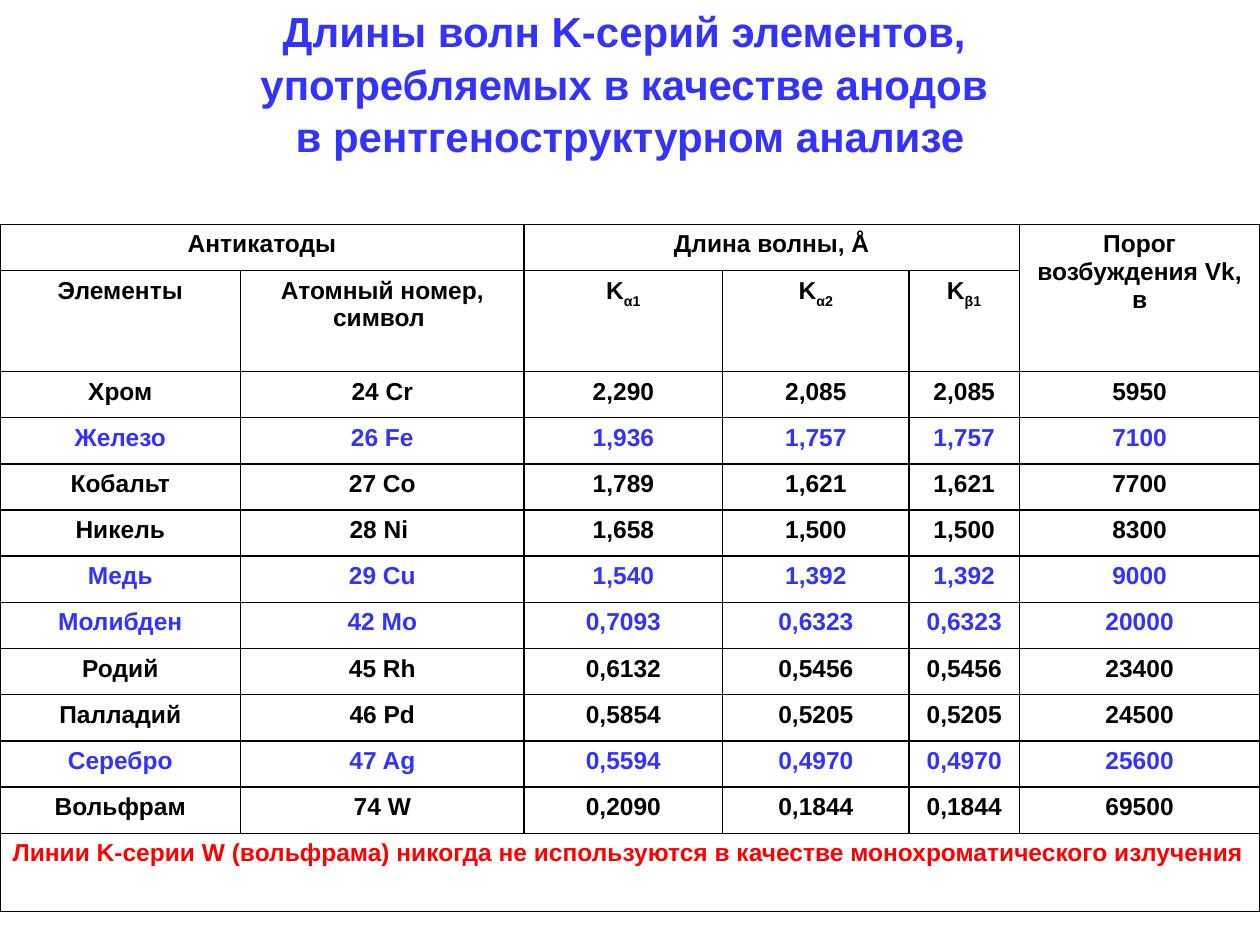
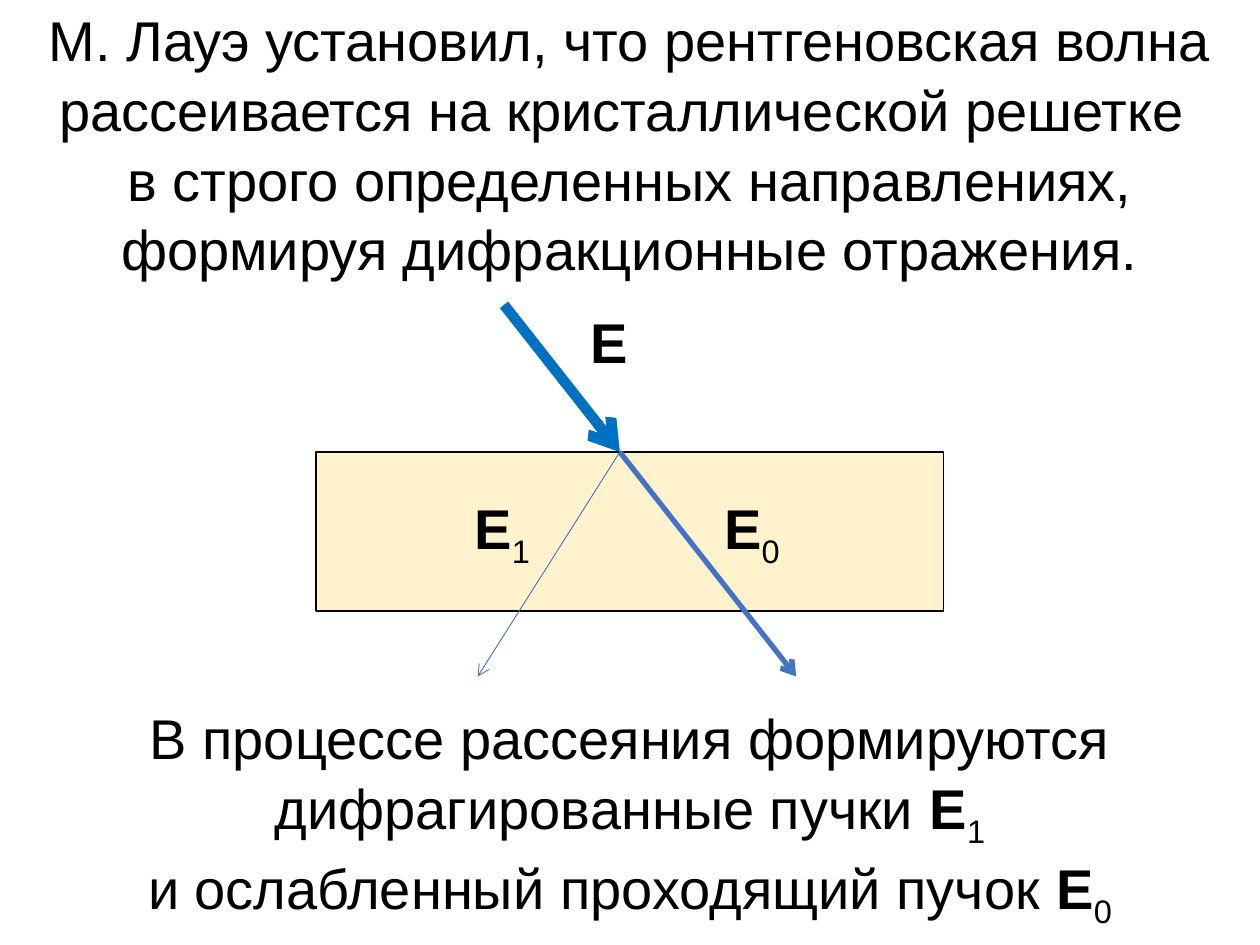
"""Build two slides on X-ray wavelengths and Laue diffraction."""
import pptx
import pptx.dml.color
import pptx.enum.shapes
import pptx.enum.text
import pptx.oxml
import pptx.oxml.ns
import pptx.util

Pt = pptx.util.Pt
RGBColor = pptx.dml.color.RGBColor
ALIGN = pptx.enum.text.PP_ALIGN
MIDDLE = pptx.enum.text.MSO_ANCHOR.MIDDLE
FIT_SHAPE = pptx.enum.text.MSO_AUTO_SIZE.SHAPE_TO_FIT_TEXT

BLACK = RGBColor(0x00, 0x00, 0x00)
WHITE = RGBColor(0xFF, 0xFF, 0xFF)
BLUE = RGBColor(0x33, 0x33, 0xFF)
RED = RGBColor(0xFF, 0x00, 0x00)
INCOMING_BLUE = RGBColor(0x00, 0x70, 0xC0)
BEAM_BLUE = RGBColor(0x44, 0x72, 0xC4)
CRYSTAL_CREAM = RGBColor(0xFF, 0xF2, 0xCC)

FONT = "Arial"
SLIDE_WIDTH = 720
LINE_SPACING = 1.04
DRAWING_NS = pptx.oxml.ns.nsdecls("a")


def write(frame, paragraphs, size, color, align=ALIGN.CENTER, spacing=None):
    """Fill a frame with paragraphs of (text, bold, baseline) pieces."""
    for index, pieces in enumerate(paragraphs):
        paragraph = frame.add_paragraph() if index else frame.paragraphs[0]
        paragraph.alignment = align
        paragraph.line_spacing = spacing
        for text, bold, baseline in pieces:
            run = paragraph.add_run()
            run.text = text
            run.font.name = FONT
            run.font.size = Pt(size)
            run.font.bold = bold
            run.font.color.rgb = color
            if baseline:
                run.font._element.set("baseline", str(baseline * 1000))


def set_panel(panel, top, height, paragraphs, size, color):
    """Place a full-width white text panel."""
    panel.left, panel.top = Pt(0), Pt(top)
    panel.width, panel.height = Pt(SLIDE_WIDTH), Pt(height)
    panel.fill.solid()
    panel.fill.fore_color.rgb = WHITE
    frame = panel.text_frame
    frame.word_wrap = True
    frame.auto_size = FIT_SHAPE
    frame.vertical_anchor = MIDDLE
    write(frame, paragraphs, size, color, spacing=LINE_SPACING)


prs = pptx.Presentation()
prs.slide_width, prs.slide_height = Pt(SLIDE_WIDTH), Pt(540)
title_only = prs.slide_layouts[5]

wavelengths = prs.slides.add_slide(title_only)
set_panel(wavelengths.shapes.title, 0, 94.3, [
    [("Длины волн K-серий элементов, ", True, 0)],
    [("употребляемых в качестве анодов ", True, 0)],
    [("в рентгеноструктурном анализе", True, 0)],
], 24, BLUE)

headings = [
    ["Антикатоды", "", "Длина волны, Å", "", "", "Порог возбуждения Vk, в"],
    ["Элементы", "Атомный номер, символ ", "K_α1", "K_α2", "K_β1", ""],
]
anodes = [
    ["Хром", "24 Cr", "2,290", "2,085", "2,085", "5950"],
    ["Железо", "26 Fe", "1,936", "1,757", "1,757", "7100"],
    ["Кобальт", "27 Co", "1,789", "1,621", "1,621", "7700"],
    ["Никель", "28 Ni ", "1,658", "1,500", "1,500", "8300"],
    ["Медь", "29 Cu", "1,540", "1,392", "1,392", "9000"],
    ["Молибден", "42 Mo", "0,7093", "0,6323", "0,6323", "20000"],
    ["Родий", "45 Rh", "0,6132", "0,5456", "0,5456", "23400"],
    ["Палладий", "46 Pd", "0,5854", "0,5205", "0,5205", "24500"],
    ["Серебро", "47 Ag", "0,5594", "0,4970", "0,4970", "25600"],
    ["Вольфрам", "74 W", "0,2090", "0,1844", "0,1844", "69500"],
]
warning = ["Линии K-серии W (вольфрама) никогда не используются "
           "в качестве монохроматического излучения"] + [""] * 5
highlighted = {"Железо", "Медь", "Молибден", "Серебро"}
rows = headings + anodes + [warning]
column_widths = [137.5, 162, 113.5, 106.5, 63, 137.5]
row_heights = [26.4, 57.6] + [26.4] * len(anodes) + [44.7]

anode_table = wavelengths.shapes.add_table(
    len(rows), len(column_widths), Pt(0), Pt(128.2),
    Pt(SLIDE_WIDTH), Pt(sum(row_heights))).table
anode_table.first_row = False
anode_table.horz_banding = False
for column, width in zip(anode_table.columns, column_widths):
    column.width = Pt(width)
for row, height in zip(anode_table.rows, row_heights):
    row.height = Pt(height)
for first, last in [((0, 0), (0, 1)), ((0, 2), (0, 4)),
                    ((0, 5), (1, 5)), ((12, 0), (12, 5))]:
    anode_table.cell(*first).merge(anode_table.cell(*last))

for row_index, values in enumerate(rows):
    color = BLUE if values[0] in highlighted else BLACK
    align = ALIGN.CENTER
    if values is warning:
        color, align = RED, ALIGN.LEFT
    for column_index, value in enumerate(values):
        cell = anode_table.cell(row_index, column_index)
        cell.fill.solid()
        cell.fill.fore_color.rgb = WHITE
        cell_properties = cell._tc.get_or_add_tcPr()
        for position, side in enumerate("LRTB"):
            cell_properties.insert(position, pptx.oxml.parse_xml(
                f'<a:ln{side} {DRAWING_NS} w="12700"><a:solidFill>'
                f'<a:srgbClr val="{BLACK}"/></a:solidFill></a:ln{side}>'))
        if value:
            base, _, subscript = value.partition("_")
            pieces = [(base, True, 0)]
            if subscript:
                pieces.append((subscript, True, -30))
            write(cell.text_frame, [pieces], 14, color, align)

diffraction = prs.slides.add_slide(title_only)
E = ("E", True, 0)
E0 = [E, ("0", False, -25)]
E1 = [E, ("1", False, -25)]
set_panel(diffraction.shapes.title, 0, 162.7, [
    [("М. Лауэ установил, что рентгеновская волна рассеивается "
      "на кристаллической решетке ", False, 0)],
    [("в строго определенных направлениях, формируя "
      "дифракционные отражения.", False, 0)],
], 32, BLACK)
conclusion = diffraction.shapes.add_textbox(Pt(0), Pt(404), Pt(SLIDE_WIDTH), Pt(124))
set_panel(conclusion, 404, 123.8, [
    [("В процессе рассеяния формируются дифрагированные пучки ", False, 0)] + E1,
    [("и ослабленный проходящий пучок ", False, 0)] + E0,
], 32, BLACK)

crystal_top = 258.3
crystal = diffraction.shapes.add_shape(
    pptx.enum.shapes.MSO_SHAPE.RECTANGLE,
    Pt(180.6), Pt(crystal_top), Pt(358.6), Pt(90.7))
crystal.shadow.inherit = False
crystal.fill.solid()
crystal.fill.fore_color.rgb = CRYSTAL_CREAM
crystal.line.color.rgb = BLACK
crystal.line.width = Pt(1)

incidence = (354.2, crystal_top)
beams = [
    ((288, 174.2), incidence, INCOMING_BLUE, 6),
    (incidence, (455, 386.6), BEAM_BLUE, 3),
    (incidence, (273, 386.6), BEAM_BLUE, 0.5),
]
for start, end, color, width in beams:
    beam = diffraction.shapes.add_connector(
        pptx.enum.shapes.MSO_CONNECTOR.STRAIGHT,
        *(Pt(length) for length in start + end))
    beam.line.color.rgb = color
    beam.line.width = Pt(width)
    beam.line._get_or_add_ln().append(
        pptx.oxml.parse_xml(f'<a:tailEnd {DRAWING_NS} type="arrow"/>'))
    beam._element.spPr.append(pptx.oxml.parse_xml(f"<a:effectLst {DRAWING_NS}/>"))

beam_labels = [([E], 330.5, 170.8, 36), (E0, 406.8, 276.5, 48), (E1, 264, 276.5, 48)]
for pieces, left, top, width in beam_labels:
    label = diffraction.shapes.add_textbox(Pt(left), Pt(top), Pt(width), Pt(46))
    label.text_frame.word_wrap = False
    label.text_frame.auto_size = FIT_SHAPE
    write(label.text_frame, [pieces], 32, BLACK, ALIGN.LEFT, LINE_SPACING)

prs.save("out.pptx")
